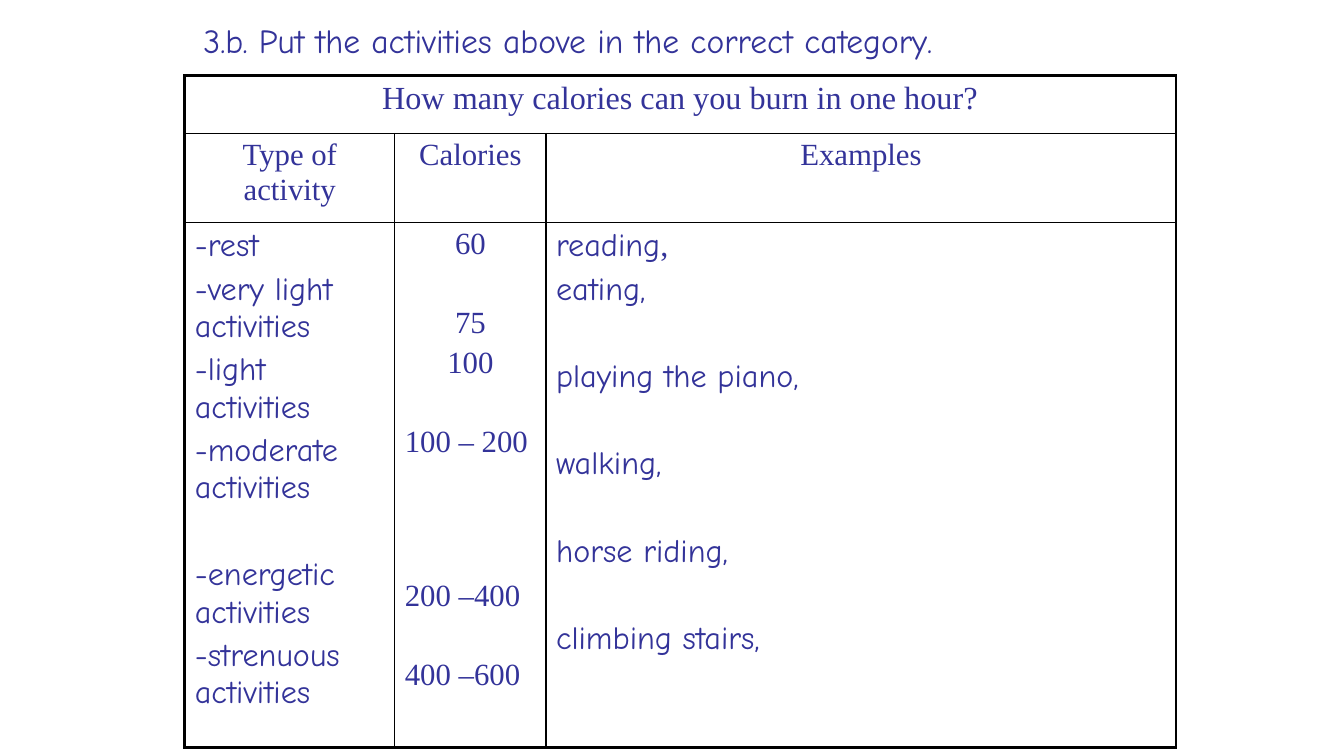
import pptx
import pptx.util
import pptx.oxml
import pptx.oxml.ns
import pptx.dml.color
import pptx.enum.text
from lxml import etree

COLOR = {"ink": "333399", "line": "000000", "page": "FFFFFF"}
HAND, SERIF = "Comic Neue", "Times New Roman"
LEFT = pptx.enum.text.PP_ALIGN.LEFT
MID = pptx.enum.text.PP_ALIGN.CENTER
COLS = [25, 18, 75]
ROWS = [6.9, 10.6, 62.5]
THICK, THIN = 2.25, 1

TYPES = [
    ("-rest", 0),
    ("-very light activities", 4.6),
    ("-light activities", 4.6),
    ("-moderate activities", 4.6),
    ("-energetic activities", 35.7),
    ("-strenuous activities", 4.6),
]
BURNS = [
    ("60", 0, MID),
    ("75", 32, MID),
    ("100", 4, MID),
    ("100 – 200", 32, LEFT),
    ("200 –400", 85.4, LEFT),
    ("400 –600", 32, LEFT),
]
CASES = [
    ("eating,", 4.6),
    ("playing the piano,", 35.8),
    ("walking,", 35.8),
    ("horse riding,", 35.8),
    ("climbing stairs,", 35.8),
]


def grid(count):
    return pptx.util.Inches(count / 12)


def tint(name):
    return pptx.dml.color.RGBColor.from_string(COLOR[name])


def add_run(para, text, size, face):
    run = para.add_run()
    run.text = text
    run.font.size = pptx.util.Pt(size)
    run.font.name = face
    run.font.bold = False
    run.font.color.rgb = tint("ink")


def fill_text(frame, paras, size):
    for spot, (runs, gap, align) in enumerate(paras):
        para = frame.paragraphs[0] if spot == 0 else frame.add_paragraph()
        para.alignment = align
        para.space_before = pptx.util.Pt(gap)
        for text, face in runs:
            add_run(para, text, size, face)


def add_edge(cell, side, width):
    tag = pptx.oxml.ns.qn
    props = cell._tc.get_or_add_tcPr()
    edge = etree.SubElement(props, tag(f"a:ln{side}"), w=str(pptx.util.Pt(width)))
    fill = etree.SubElement(edge, tag("a:solidFill"))
    etree.SubElement(fill, tag("a:srgbClr"), val=COLOR["line"])


def style_cell(cell, row, col):
    outer = {
        "L": col == 0,
        "R": col == len(COLS) - 1,
        "T": row == 0,
        "B": row == len(ROWS) - 1,
    }
    for side, bold in outer.items():
        add_edge(cell, side, THICK if bold else THIN)
    cell.fill.background()


def add_title(slide, text):
    title = slide.shapes.title
    title.left, title.top = grid(23), grid(1.8)
    title.width, title.height = grid(100.2), grid(6)
    frame = title.text_frame
    frame.word_wrap = False
    frame.auto_size = pptx.enum.text.MSO_AUTO_SIZE.SHAPE_TO_FIT_TEXT
    frame.vertical_anchor = pptx.enum.text.MSO_ANCHOR.TOP
    fill_text(frame, [([(text, HAND)], 0, LEFT)], 24)


def add_grid(slide):
    frame = slide.shapes.add_table(
        len(ROWS), len(COLS), grid(22), grid(9), grid(sum(COLS)), grid(sum(ROWS))
    )
    table = frame.table
    table.first_row = table.horz_banding = False
    for col, width in zip(table.columns, COLS):
        col.width = grid(width)
    for row, height in zip(table.rows, ROWS):
        row.height = grid(height)
    for row in range(len(ROWS)):
        for col in range(len(COLS)):
            style_cell(table.cell(row, col), row, col)
    table.cell(0, 0).merge(table.cell(0, len(COLS) - 1))
    return table


def fill_grid(table):
    head = "How many calories can you burn in one hour?"
    fill_text(table.cell(0, 0).text_frame, [([(head, SERIF)], 0, MID)], 23)
    for col, name in enumerate(["Type of activity", "Calories", "Examples"]):
        fill_text(table.cell(1, col).text_frame, [([(name, SERIF)], 0, MID)], 22)
    types = [([(text, HAND)], gap, LEFT) for text, gap in TYPES]
    burns = [([(text, SERIF)], gap, align) for text, gap, align in BURNS]
    cases = [([("reading", HAND), (",", SERIF)], 0, LEFT)]
    cases += [([(text, HAND)], gap, LEFT) for text, gap in CASES]
    for col, (paras, size) in enumerate([(types, 23), (burns, 22), (cases, 23)]):
        fill_text(table.cell(2, col).text_frame, paras, size)


def main():
    deck = pptx.Presentation()
    deck.slide_width, deck.slide_height = grid(160), grid(90)
    slide = deck.slides.add_slide(deck.slide_layouts.get_by_name("Title Only"))
    slide.background.fill.solid()
    slide.background.fill.fore_color.rgb = tint("page")
    add_title(slide, "3.b. Put the activities above in the correct category.")
    fill_grid(add_grid(slide))
    deck.save("out.pptx")


if __name__ == "__main__":
    main()
